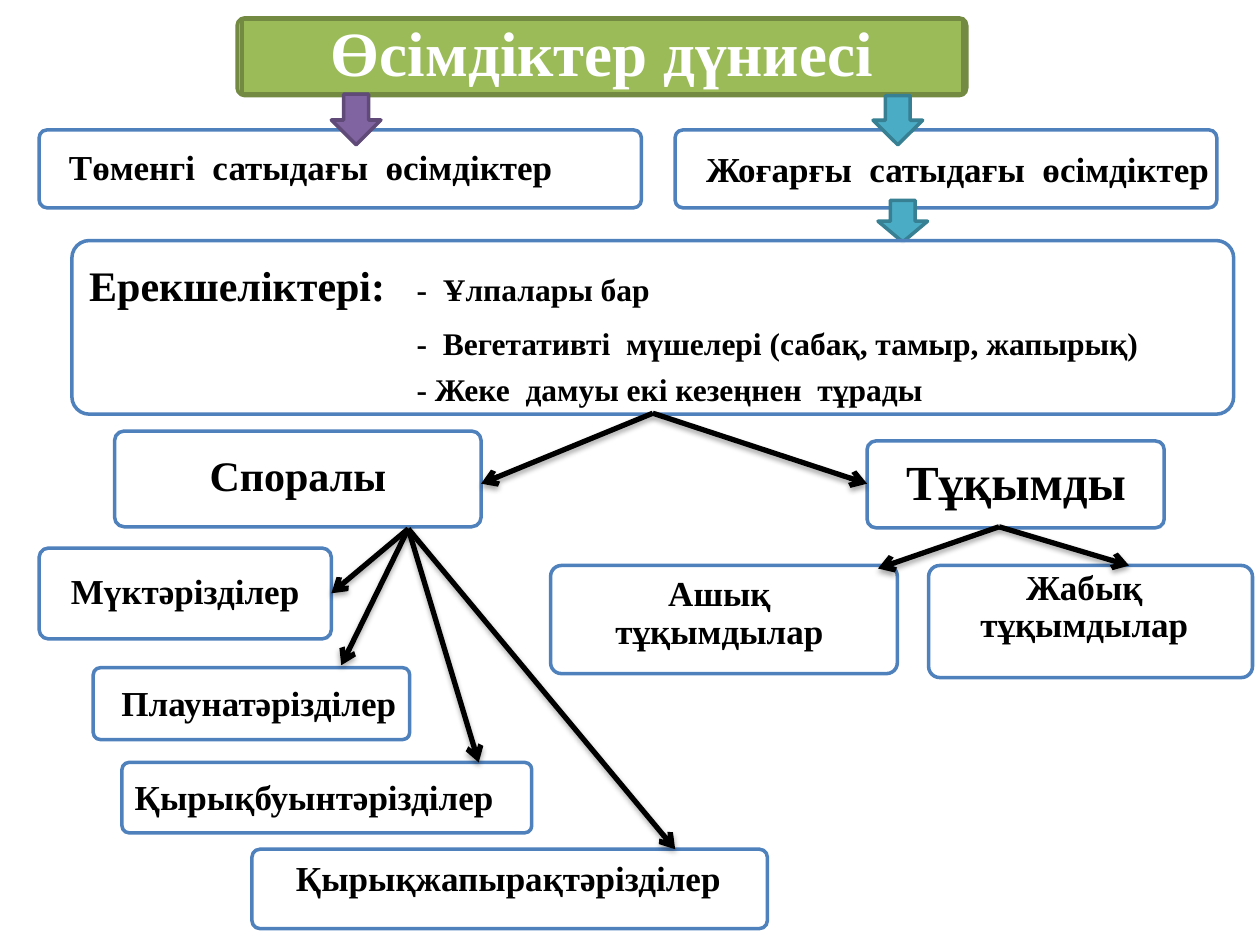
import lxml.etree
import pptx
import pptx.dml.color
import pptx.enum.shapes
import pptx.enum.text
import pptx.oxml
import pptx.oxml.ns
import pptx.util

Cm = pptx.util.Cm
Pt = pptx.util.Pt
RGBColor = pptx.dml.color.RGBColor
Shape = pptx.enum.shapes.MSO_SHAPE
Align = pptx.enum.text.PP_ALIGN
qn = pptx.oxml.ns.qn

FONT = "Times New Roman"
BLACK = RGBColor(0x00, 0x00, 0x00)
WHITE = RGBColor(0xFF, 0xFF, 0xFF)
BLUE = RGBColor(0x4F, 0x81, 0xBD)
GREEN = RGBColor(0x9B, 0xBB, 0x59)
DARK_GREEN = RGBColor(0x73, 0x8A, 0x42)
PURPLE = RGBColor(0x80, 0x64, 0xA2)
DARK_PURPLE = RGBColor(0x5F, 0x4A, 0x78)
TEAL = RGBColor(0x4B, 0xAC, 0xC6)
DARK_TEAL = RGBColor(0x37, 0x7F, 0x92)

INSET = 0.2
FEATURE_INDENT = 6.6
SHADOW_XML = (
    '<a:effectLst xmlns:a="http://schemas.openxmlformats.org/drawingml/2006/main">'
    '<a:outerShdw blurRad="40000" dist="23000" dir="5400000" rotWithShape="0">'
    '<a:srgbClr val="000000"><a:alpha val="35000"/></a:srgbClr>'
    "</a:outerShdw></a:effectLst>"
)


def lengths(box):
    return [Cm(value) for value in box]


def inner_box(box, offset):
    """Move a box by (left, top) and give it the (width, height) in offset."""
    left, top, width, height = offset
    return box[0] + left, box[1] + top, width, height


def add_span(para, text, size=20, color=BLACK):
    span = para.add_run()
    span.text = text
    span.font.name = FONT
    span.font.size = Pt(size)
    span.font.bold = True
    span.font.color.rgb = color


def format_para(para, align=Align.CENTER, size=20):
    para.alignment = align
    para.line_spacing = 0.9
    para.space_after = Pt(0.4 * size)


def prepare_frame(frame):
    frame.word_wrap = True
    frame.vertical_anchor = pptx.enum.text.MSO_ANCHOR.MIDDLE
    frame.margin_left = frame.margin_right = Cm(INSET)
    frame.margin_top = frame.margin_bottom = Cm(INSET)
    return frame


def add_label(page, box, text, size=20, align=Align.CENTER):
    frame = prepare_frame(page.shapes.add_textbox(*lengths(box)).text_frame)
    format_para(frame.paragraphs[0], align, size)
    add_span(frame.paragraphs[0], text, size)


def add_block(page, kind, box, fill, line):
    block = page.shapes.add_shape(kind, *lengths(box))
    block.shadow.inherit = False
    block.fill.solid()
    block.fill.fore_color.rgb = fill
    block.line.color.rgb = line
    block.line.width = Pt(2)
    if kind == Shape.ROUNDED_RECTANGLE:
        block.adjustments[0] = 0.1
    return block


def add_panel(page, box):
    """Draw a rounded white panel that is 90 % opaque."""
    panel = add_block(page, Shape.ROUNDED_RECTANGLE, box, WHITE, BLUE)
    color = panel.fill._xPr.find(qn("a:solidFill")).find(qn("a:srgbClr"))
    lxml.etree.SubElement(color, qn("a:alpha")).set("val", "90000")


def draw_card(page, box, offset, text, **text_format):
    add_panel(page, box)
    add_label(page, inner_box(box, offset), text, **text_format)


def draw_title(page, box, text):
    left, top, width, height = box
    add_block(page, Shape.ROUNDED_RECTANGLE, box, GREEN, DARK_GREEN)
    plate_box = inner_box(box, (0.1, 0.02, width - 0.18, height - 0.05))
    plate = add_block(page, Shape.RECTANGLE, plate_box, GREEN, DARK_GREEN)
    para = prepare_frame(plate.text_frame).paragraphs[0]
    format_para(para, size=36)
    add_span(para, text, size=36, color=WHITE)


def draw_features(page, box, heading, features):
    """Set the heading beside the first feature and align the rest under it."""
    add_panel(page, box)
    label_box = inner_box(box, (0.15, 0, box[2] - 0.28, box[3] + 0.39))
    frame = prepare_frame(page.shapes.add_textbox(*lengths(label_box)).text_frame)
    for index, feature in enumerate(features):
        para = frame.paragraphs[0] if index == 0 else frame.add_paragraph()
        format_para(para, Align.JUSTIFY, 18 if index else 24)
        properties = para._p.get_or_add_pPr()
        if index == 0:
            stops = lxml.etree.SubElement(properties, qn("a:tabLst"))
            stop = lxml.etree.SubElement(stops, qn("a:tab"))
            stop.set("pos", str(Cm(FEATURE_INDENT)))
            stop.set("algn", "l")
            add_span(para, heading + "\t", size=24)
        else:
            properties.set("marL", str(Cm(FEATURE_INDENT)))
            properties.set("indent", "0")
        add_span(para, feature, size=18)


def draw_arrow(page, start, end):
    arrow = page.shapes.add_connector(
        pptx.enum.shapes.MSO_CONNECTOR.STRAIGHT, *lengths(start + end))
    arrow.line.color.rgb = BLACK
    arrow.line.width = Pt(3)
    lxml.etree.SubElement(arrow.line._get_or_add_ln(), qn("a:tailEnd")).set("type", "arrow")
    arrow._element.spPr.append(pptx.oxml.parse_xml(SHADOW_XML))


# Panel box, label box relative to the panel, text and its format
CARDS = [
    ((0.79, 2.62, 12.14, 1.57), (0.4, 0.3, 11.76, 1), "Төменгі  сатыдағы  өсімдіктер",
     {"align": Align.JUSTIFY}),
    ((13.61, 2.62, 10.92, 1.57), (0, 0.1, 11.4, 1.47), "Жоғарғы  сатыдағы  өсімдіктер", {}),
    ((2.31, 8.69, 7.39, 1.93), (0.05, 0.05, 7.29, 1.8), "Споралы", {"size": 24}),
    ((17.48, 8.89, 5.99, 1.75), (0.03, 0.05, 5.94, 1.65), "Тұқымды", {"size": 28}),
    ((0.79, 11.05, 5.89, 1.83), (0, 0.05, 5.89, 1.73), "Мүктәрізділер", {}),
    ((1.88, 13.46, 6.38, 1.45), (0, 0.08, 6.68, 1.37), "Плаунатәрізділер", {}),
    ((5.08, 17.12, 10.39, 1.6), (0, -0.28, 10.34, 1.8), "Қырықжапырақтәрізділер", {}),
    ((2.46, 15.37, 8.26, 1.42), (-0.1, 0.05, 7.95, 1.37), "Қырықбуынтәрізділер", {}),
    ((11.1, 11.4, 6.99, 2.18), (0, -0.3, 6.81, 2.57), "Ашық тұқымдылар", {}),
    ((18.72, 11.4, 6.53, 2.26), (-0.25, 0, 6.78, 1.7), "Жабық тұқымдылар", {}),
]
DOWN_ARROWS = [
    ((6.68, 1.9, 1, 1.02), PURPLE, DARK_PURPLE),
    ((17.6, 1.93, 1, 0.99), TEAL, DARK_TEAL),
    ((17.7, 4.04, 1, 0.84), TEAL, DARK_TEAL),
]
# Each branching point with the ends of its arrows
BRANCHES = [
    ((13.16, 8.33), [(9.7, 9.75), (17.48, 9.75)]),
    ((8.23, 10.66), [(13.61, 17.12), (6.68, 11.96), (9.65, 15.37), (6.88, 13.41)]),
    ((20.14, 10.62), [(17.7, 11.46), (22.76, 11.4)]),
]


def main():
    deck = pptx.Presentation()
    deck.slide_width, deck.slide_height = Cm(25.4), Cm(19.05)
    page = deck.slides.add_slide(deck.slide_layouts[6])

    draw_title(page, (4.78, 0.36, 14.71, 1.57), "Өсімдіктер дүниесі")
    for box, offset, text, text_format in CARDS:
        draw_card(page, box, offset, text, **text_format)
    for box, fill, line in DOWN_ARROWS:
        add_block(page, Shape.DOWN_ARROW, box, fill, line)
    draw_features(page, (1.45, 4.85, 23.42, 3.5), "Ерекшеліктері:", [
        "-  Ұлпалары бар",
        "-  Вегетативті  мүшелері (сабақ, тамыр, жапырық)",
        "- Жеке  дамуы екі кезеңнен  тұрады",
    ])
    for start, ends in BRANCHES:
        for end in ends:
            draw_arrow(page, start, end)
    deck.save("out.pptx")


if __name__ == "__main__":
    main()
